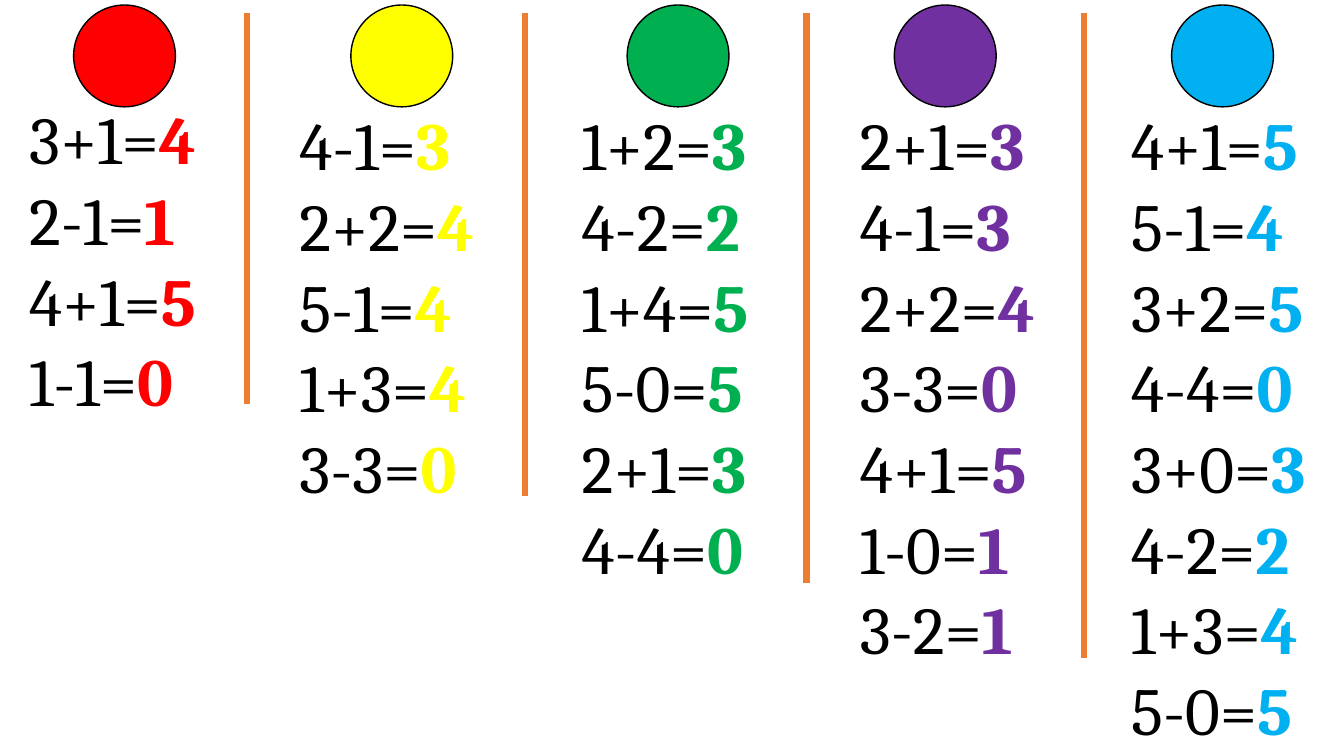
import pptx
import pptx.dml.color
import pptx.enum.shapes
import pptx.enum.text
import pptx.oxml.ns
import pptx.util
from lxml import etree

Inches = pptx.util.Inches
Pt = pptx.util.Pt
ALIGN = pptx.enum.text.PP_ALIGN

SUM_WIDTH = 2.09
LINE_HEIGHT = 0.81
DOT_SIZE = 1.01
DOT_TOP = 0.05
DIVIDER_TOP = 0.13

COLUMNS = [
    (0.19, 0.92, 0.73, "FF0000", ALIGN.JUSTIFY,
     ["3+1=4", "2-1=1", "4+1=5", "1-1=0"]),
    (2.87, 0.98, 3.48, "FFFF00", ALIGN.LEFT,
     ["4-1=3", "2+2=4", "5-1=4", "1+3=4", "3-3=0"]),
    (5.67, 0.98, 6.22, "00B050", ALIGN.LEFT,
     ["1+2=3", "4-2=2", "1+4=5", "5-0=5", "2+1=3", "4-4=0"]),
    (8.43, 0.98, 8.87, "7030A0", ALIGN.LEFT,
     ["2+1=3", "4-1=3", "2+2=4", "3-3=0", "4+1=5", "1-0=1", "3-2=1"]),
    (11.12, 0.98, 11.62, "00B0F0", ALIGN.LEFT,
     ["4+1=5", "5-1=4", "3+2=5", "4-4=0", "3+0=3", "4-2=2", "1+3=4", "5-0=5"]),
]
DIVIDERS = [(2.45, 4.01), (5.21, 4.92), (8, 5.78), (10.75, 6.53)]


def rgb(value):
    return pptx.dml.color.RGBColor.from_string(value)


def add_divider(s, x, bottom):
    line = s.shapes.add_connector(
        pptx.enum.shapes.MSO_CONNECTOR.STRAIGHT,
        Inches(x), Inches(DIVIDER_TOP), Inches(x), Inches(bottom))
    line.line.color.rgb = rgb("ED7D31")
    line.line.width = Pt(4.5)
    etree.SubElement(line._element.spPr, pptx.oxml.ns.qn("a:effectLst"))


def add_dot(s, left, color):
    sp = s.shapes.add_shape(
        pptx.enum.shapes.MSO_SHAPE.OVAL,
        Inches(left), Inches(DOT_TOP), Inches(DOT_SIZE), Inches(DOT_SIZE))
    sp.shadow.inherit = False
    sp.fill.solid()
    sp.fill.fore_color.rgb = rgb(color)
    sp.line.color.rgb = rgb("000000")
    sp.line.width = Pt(1)


def add_run(p, text, color, bold):
    r = p.add_run()
    r.text = text
    r.font.name = "Cambria"
    r.font.size = Pt(48)
    r.font.bold = bold
    r.font.color.rgb = rgb(color)


def add_sums(s, left, top, color, align, sums):
    box = s.shapes.add_textbox(
        Inches(left), Inches(top),
        Inches(SUM_WIDTH), Inches(len(sums) * LINE_HEIGHT + 0.1))
    tf = box.text_frame
    tf.word_wrap = True
    tf.auto_size = pptx.enum.text.MSO_AUTO_SIZE.SHAPE_TO_FIT_TEXT
    for i, equation in enumerate(sums):
        p = tf.add_paragraph() if i else tf.paragraphs[0]
        p.alignment = align
        add_run(p, equation[:-1], "000000", False)
        add_run(p, equation[-1], color, True)


def main():
    prs = pptx.Presentation()
    prs.slide_width = Inches(13.33)
    prs.slide_height = Inches(7.5)
    s = prs.slides.add_slide(prs.slide_layouts[6])
    for x, bottom in DIVIDERS:
        add_divider(s, x, bottom)
    for left, top, dot_left, color, align, sums in COLUMNS:
        add_dot(s, dot_left, color)
        add_sums(s, left, top, color, align, sums)
    prs.save("out.pptx")


if __name__ == "__main__":
    main()
